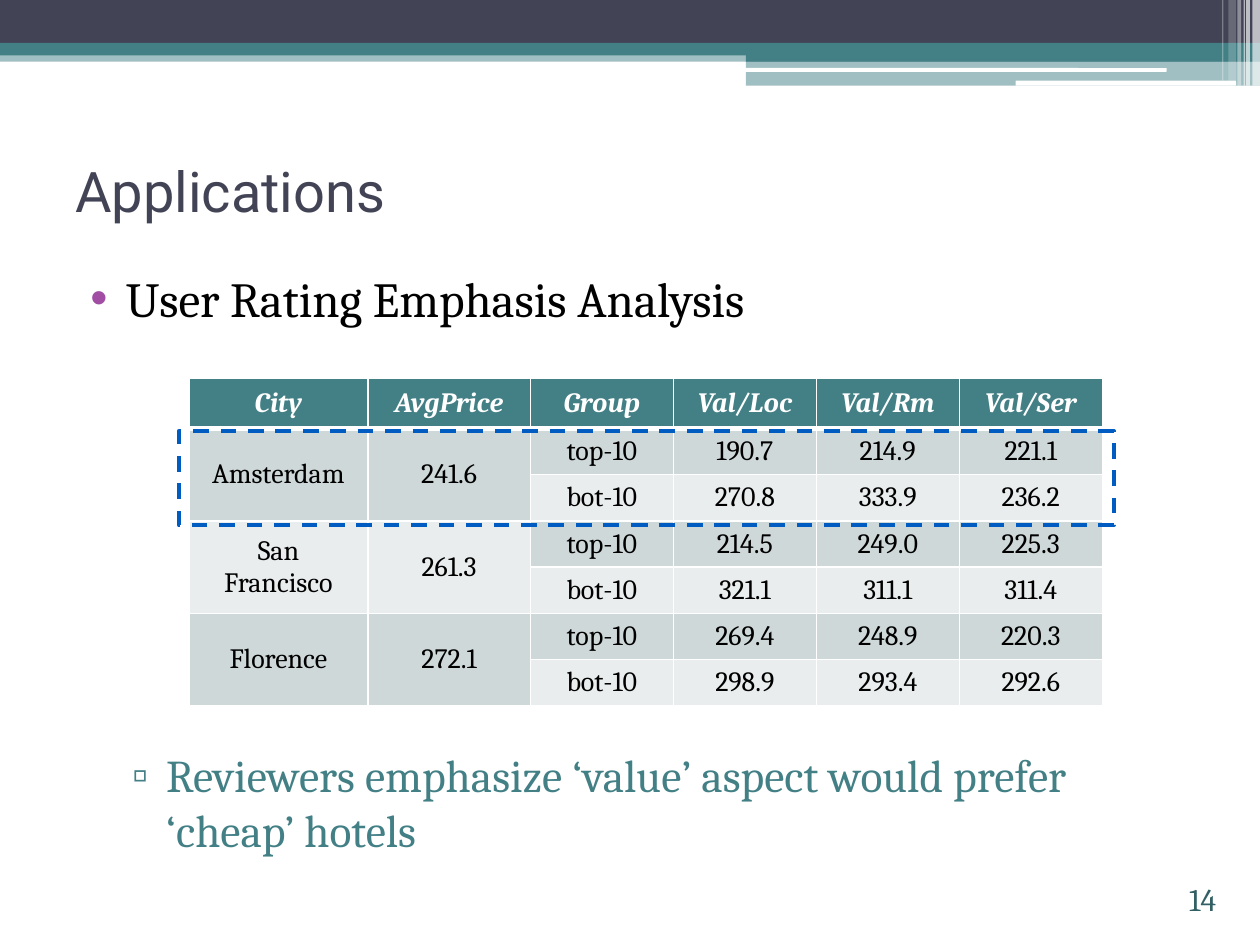
from collections import namedtuple

from lxml.etree import SubElement
from pptx import Presentation
from pptx.dml.color import RGBColor
from pptx.enum.dml import MSO_LINE
from pptx.enum.shapes import MSO_SHAPE
from pptx.enum.text import MSO_ANCHOR, PP_ALIGN
from pptx.oxml.ns import qn
from pptx.util import Inches, Pt

UNIT = 0.1  # inches: the slide is a grid of 100 columns by 75 rows
COLS, ROWS = 100, 75

Box = namedtuple("Box", "x y w h")


class Theme:
    navy, teal, white, black = "424456", "438086", "FFFFFF", "000000"
    dark_teal, purple, blue = "326065", "A04DA3", "005CC0"
    band, light_band = "CFD8D9", "E9EDED"
    title = {"name": "Roboto", "size": Pt(32), "color": navy}
    topic = {"name": "Cambria", "size": Pt(28), "color": black}
    point = {"name": "Cambria", "size": Pt(26), "color": teal}
    number = {"name": "Cambria", "size": Pt(18), "color": dark_teal}
    cell = {"name": "Cambria", "size": Pt(16), "color": black}
    head = {**cell, "color": white, "bold": True, "italic": True}


HEADINGS = ["City", "AvgPrice", "Group", "Val/Loc", "Val/Rm", "Val/Ser"]
CITIES = [
    ("Amsterdam", "241.6", ["190.7", "214.9", "221.1"], ["270.8", "333.9", "236.2"]),
    ("San Francisco", "261.3", ["214.5", "249.0", "225.3"], ["321.1", "311.1", "311.4"]),
    ("Florence", "272.1", ["269.4", "248.9", "220.3"], ["298.9", "293.4", "292.6"]),
]


def emu(box):
    return [Inches(v * UNIT) for v in box]


def inside(box, part):
    """Move a part given from the corner of a box to its place on the slide."""
    return Box(box.x + part.x, box.y + part.y, part.w, part.h)


def set_font(font, style):
    for key, value in style.items():
        if key == "color":
            font.color.rgb = RGBColor.from_string(value)
        else:
            setattr(font, key, value)


def write(p, text, style, align=PP_ALIGN.LEFT):
    p.alignment = align
    r = p.add_run()
    r.text = text
    set_font(r.font, style)


def add_text_frame(s, box, anchor):
    tf = s.shapes.add_textbox(*emu(box)).text_frame
    tf.word_wrap = True
    tf.vertical_anchor = anchor
    return tf


def add_block(s, box, color, alpha=100, shape=MSO_SHAPE.RECTANGLE):
    sp = s.shapes.add_shape(shape, *emu(box))
    sp.shadow.inherit = False
    sp.line.fill.background()
    sp.fill.solid()
    sp.fill.fore_color.rgb = RGBColor.from_string(color)
    if alpha < 100:
        clr = sp.fill._xPr.find(".//" + qn("a:srgbClr"))
        SubElement(clr, qn("a:alpha"), val=str(alpha * 1000))


def add_banner(s, box):
    mid = 59.2
    bands = [
        (0, 4, box.w, 0.9, Theme.teal, 50),
        (0, 0, box.w, 3.4, Theme.navy, 100),
        (0, 3.4, box.w, 1, Theme.teal, 100),
        (mid, 3.9, box.w - mid, 1, Theme.teal, 100),
        (mid, 4.8, box.w - mid, 2, Theme.teal, 50),
    ]
    for *part, color, alpha in bands:
        add_block(s, inside(box, Box(*part)), color, alpha)
    for part in (Box(59.1, 5.4, 33.5, 0.3), Box(80.6, 6.4, 17.5, 0.4)):
        add_block(s, inside(box, part), Theme.white,
                  shape=MSO_SHAPE.ROUNDED_RECTANGLE)
    stripes = [(99.4, 0.6, 6.8, 65), (98.9, 0.3, 6.8, 65), (98.7, 0.1, 6.8, 60),
               (98.2, 0.3, 6.8, 40), (97.5, 0.6, 6.4, 20), (97, 0.1, 6.4, 30)]
    for x, w, h, alpha in stripes:
        add_block(s, inside(box, Box(x, 0, w, h)), Theme.white, alpha)


def add_title(s, box, text):
    tf = add_text_frame(s, box, MSO_ANCHOR.MIDDLE)
    write(tf.paragraphs[0], text, Theme.title)


def add_number(s, box, text):
    tf = add_text_frame(s, box, MSO_ANCHOR.BOTTOM)
    write(tf.paragraphs[0], text, Theme.number, PP_ALIGN.RIGHT)


def set_bullet(p, char, color, left, hang):
    pPr = p._p.get_or_add_pPr()
    pPr.set("marL", str(Inches(left)))
    pPr.set("indent", str(-Inches(hang)))
    SubElement(SubElement(pPr, qn("a:buClr")), qn("a:srgbClr"), val=color)
    SubElement(pPr, qn("a:buFont"), typeface="Arial")
    SubElement(pPr, qn("a:buChar"), char=char)


def add_body(s, box, topic, point, gap):
    """Write the topic and its point, with a gap for the table between them."""
    tf = add_text_frame(s, box, MSO_ANCHOR.TOP)
    p = tf.paragraphs[0]
    set_bullet(p, "•", Theme.purple, 0.4, 0.28)
    write(p, topic, Theme.topic)
    p = tf.add_paragraph()
    p.level = 1
    p.space_before = gap
    set_bullet(p, "▫", Theme.teal, 0.72, 0.27)
    write(p, point, Theme.point)


def set_borders(cell, **widths):
    tcPr = cell._tc.get_or_add_tcPr()
    for side in "LRTB":
        ln = SubElement(tcPr, qn("a:ln" + side), w=str(Pt(widths.get(side, 1))))
        fill = SubElement(ln, qn("a:solidFill"))
        SubElement(fill, qn("a:srgbClr"), val=Theme.white)


def fill_cell(cell, text, style, color, **widths):
    set_borders(cell, **widths)
    cell.fill.solid()
    cell.fill.fore_color.rgb = RGBColor.from_string(color)
    cell.vertical_anchor = MSO_ANCHOR.MIDDLE
    write(cell.text_frame.paragraphs[0], text, style, PP_ALIGN.CENTER)


def add_ratings(s, box):
    """Give each city two rows: its top-10 and bot-10 groups."""
    lines = 2 * len(CITIES)
    table = s.shapes.add_table(lines + 1, len(HEADINGS), *emu(box)).table
    city_w, price_w, head_h = 14.2, 12.9, 4
    other_w = (box.w - city_w - price_w) / 4
    for col, w in zip(table.columns, [city_w, price_w] + [other_w] * 4):
        col.width = Inches(w * UNIT)
    for row, h in zip(table.rows, [head_h] + [(box.h - head_h) / lines] * lines):
        row.height = Inches(h * UNIT)
    for c, text in enumerate(HEADINGS):
        fill_cell(table.cell(0, c), text, Theme.head, Theme.teal, B=3)
    shades = [Theme.band, Theme.light_band]
    for i, (city, price, top, bottom) in enumerate(CITIES):
        first = 2 * i + 1
        widths = {"T": 3} if i == 0 else {}
        for c, text in enumerate([city, price]):
            cell = table.cell(first, c)
            cell.merge(table.cell(first + 1, c))
            fill_cell(cell, text, Theme.cell, shades[i % 2], **widths)
            set_borders(table.cell(first + 1, c))
        for k, values in enumerate([["top-10", *top], ["bot-10", *bottom]]):
            for c, text in enumerate(values, 2):
                fill_cell(table.cell(first + k, c), text, Theme.cell, shades[k],
                          **(widths if k == 0 else {}))


def add_highlight(s, box):
    sp = s.shapes.add_shape(MSO_SHAPE.RECTANGLE, *emu(box))
    sp.shadow.inherit = False
    sp.fill.background()
    sp.line.color.rgb = RGBColor.from_string(Theme.blue)
    sp.line.width = Pt(2.25)
    sp.line.dash_style = MSO_LINE.DASH


def main():
    prs = Presentation()
    prs.slide_width, prs.slide_height = Inches(COLS * UNIT), Inches(ROWS * UNIT)
    s = prs.slides.add_slide(prs.slide_layouts[6])
    add_banner(s, Box(0, 0, COLS, 6.8))
    add_title(s, Box(5, 9.2, 90, 11.7), "Applications")
    add_body(s, Box(5, 20.8, 90, 51.7), "User Rating Emphasis Analysis",
             "Reviewers emphasize ‘value’ aspect would prefer ‘cheap’ hotels", Pt(240))
    add_number(s, Box(89.2, 69.3, 8.3, 4), "14")
    add_ratings(s, Box(15, 30, 72.5, 25.3))
    add_highlight(s, Box(14.2, 34.2, 74.2, 7.5))
    prs.save("out.pptx")


if __name__ == "__main__":
    main()
